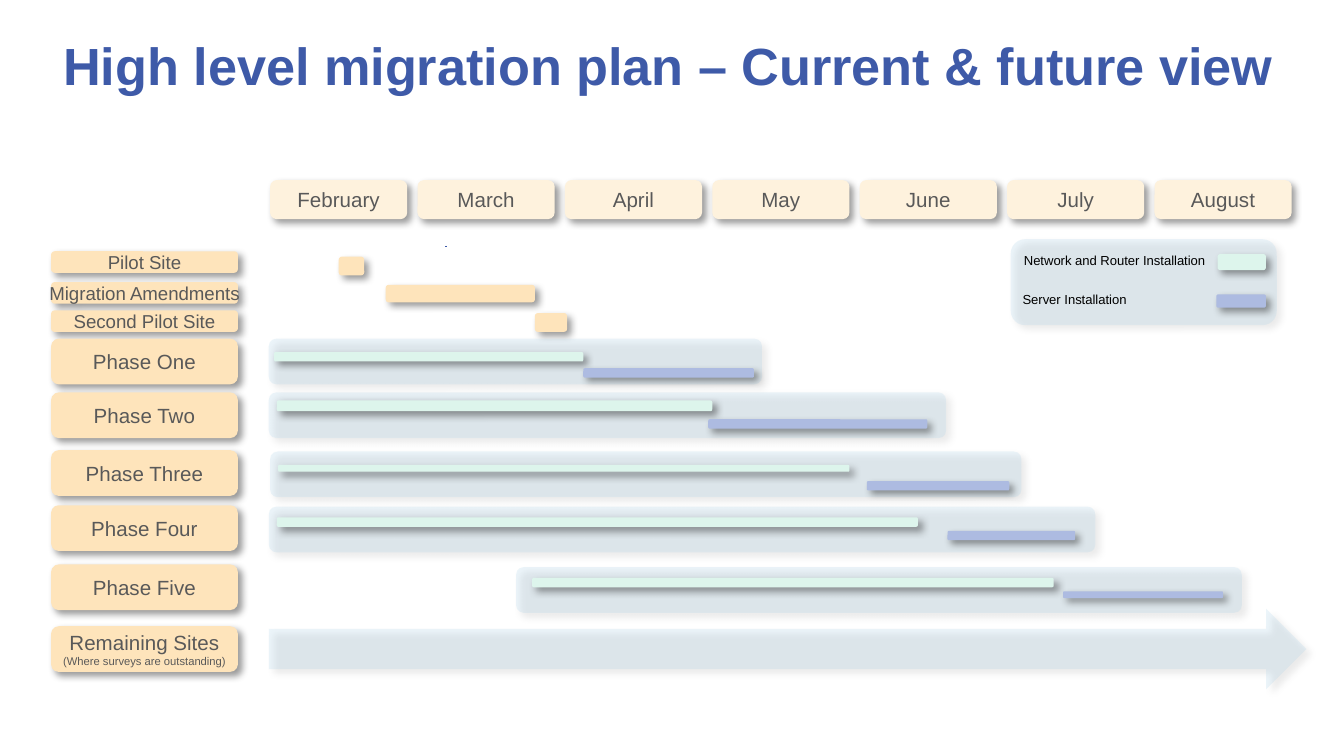
from collections import namedtuple
from dataclasses import dataclass

from lxml.etree import SubElement as Sub
from pptx import Presentation
from pptx.dml.color import RGBColor as Rgb
from pptx.enum.shapes import MSO_CONNECTOR as Link, MSO_SHAPE as Kind
from pptx.enum.text import MSO_ANCHOR as Anchor, MSO_AUTO_SIZE as Auto, PP_ALIGN as Align
from pptx.oxml.ns import qn
from pptx.util import Pt

PX = 9144
Box = namedtuple("Box", "x y w h")


@dataclass(frozen=True)
class Theme:
    """Colours, type sizes and font of the slide."""
    font: str = "Arial"
    blue: str = "3E5AA8"
    tick: str = "3A57A7"
    grey: str = "595959"
    black: str = "000000"
    month: str = "FEF2DD"
    label: str = "FEE4BB"
    panel: str = "A2CEE8"
    net: str = "DDF5EC"
    server: str = "ADBBE1"
    head: int = 28
    large: int = 11
    mid: int = 10
    key: int = 7
    small: int = 6


T = Theme()

MONTHS = ["February", "March", "April", "May", "June", "July", "August"]

PILOTS = [
    ("Pilot Site", 0, Box(214, 4, 19, 14)),
    ("Migration Amendments", 23, Box(249, 25, 111, 13)),
    ("Second Pilot Site", 44, Box(360, 46, 24, 14)),
]

PHASES = [
    ("Phase One", 252, Box(162, 0, 367, 34), Box(4, 10, 230, 7), Box(234, 22, 127, 7)),
    ("Phase Two", 292, Box(162, 0, 504, 34), Box(6, 6, 324, 8), Box(327, 20, 163, 7)),
    ("Phase Three", 335, Box(163, 1, 559, 34), Box(6, 10, 425, 5), Box(444, 22, 106, 7)),
    ("Phase Four", 376, Box(162, 1, 615, 34), Box(6, 8, 477, 7), Box(505, 18, 95, 7)),
    ("Phase Five", 420, Box(346, 2, 540, 34), Box(12, 8, 388, 7), Box(407, 18, 119, 5)),
]


def inner(box, part):
    """Return a part's box moved into its parent's box."""
    return Box(box.x + part.x, box.y + part.y, part.w, part.h)


def emu(box):
    """Turn a box in px into whole EMU."""
    return [round(v * PX) for v in box]


def write(par, text, size, color, bold=False):
    """Add one formatted run to a paragraph."""
    run = par.add_run()
    run.text = text
    font = run.font
    font.name, font.size, font.bold = T.font, Pt(size), bold
    font.color.rgb = Rgb.from_string(color)


def block(shapes, box, color, kind=Kind.ROUNDED_RECTANGLE, alpha=None):
    """Draw a borderless filled shape with a soft shadow."""
    shape = shapes.add_shape(kind, *emu(box))
    shape.fill.solid()
    shape.fill.fore_color.rgb = Rgb.from_string(color)
    shape.line.fill.background()
    shape.shadow.inherit = False
    props = shape._element.spPr
    if alpha:
        tone = props.find(qn("a:solidFill")).find(qn("a:srgbClr"))
        Sub(tone, qn("a:alpha"), val=str(alpha * 1000))
    cast = Sub(props.find(qn("a:effectLst")), qn("a:outerShdw"),
               blurRad=str(Pt(4)), dist=str(Pt(3)), dir="2700000", rotWithShape="0")
    Sub(Sub(cast, qn("a:srgbClr"), val=T.black), qn("a:alpha"), val="40000")
    return shape


def label(shapes, box, color, rows, wrap=False):
    """Draw a block with centred lines of text."""
    frame = block(shapes, box, color).text_frame
    frame.word_wrap = wrap
    frame.vertical_anchor = Anchor.MIDDLE
    for i, (text, size) in enumerate(rows):
        par = frame.add_paragraph() if i else frame.paragraphs[0]
        par.alignment = Align.CENTER
        write(par, text, size, T.grey)


def panel(shapes, box, kind=Kind.ROUNDED_RECTANGLE):
    """Draw a pale see-through panel."""
    block(shapes, box, T.panel, kind, alpha=20)


def title(slide, box):
    """Place and fill the title placeholder."""
    head = slide.shapes.title
    head.left, head.top, head.width, head.height = emu(box)
    frame = head.text_frame
    frame.word_wrap = False
    frame.auto_size = Auto.SHAPE_TO_FIT_TEXT
    frame.vertical_anchor = Anchor.TOP
    par = frame.paragraphs[0]
    par.alignment = Align.LEFT
    write(par, "High level migration plan – Current & future view", T.head, T.blue, True)


def months(shapes, box):
    """Spread the month headers evenly over the box."""
    wide = 102
    step = (box.w - wide) / (len(MONTHS) - 1)
    for i, name in enumerate(MONTHS):
        part = Box(i * step, 0, wide, box.h)
        label(shapes, inner(box, part), T.month, [(name, T.large)], True)


def pilots(shapes, box):
    """Draw the pilot labels, their bars and the tick mark."""
    for name, top, bar in PILOTS:
        label(shapes, inner(box, Box(0, top, 139, 16)), T.label, [(name, T.mid)])
        block(shapes, inner(box, bar), T.label)
    x, y, _, _ = emu(inner(box, Box(294, -4, 0, 0)))
    tick = shapes.add_connector(Link.STRAIGHT, x, y, x, y + PX)
    tick.line.color.rgb = Rgb.from_string(T.tick)
    tick.line.width = Pt(0.75)
    Sub(tick._element.spPr, qn("a:effectLst"))


def phase(shapes, box, name, area, net, server):
    """Draw one phase: label, panel and two bars."""
    label(shapes, box, T.label, [(name, T.large)])
    area = inner(box, area)
    panel(shapes, area)
    block(shapes, inner(area, net), T.net)
    block(shapes, inner(area, server), T.server)


def rest(shapes, box):
    """Draw the remaining sites label and its arrow."""
    rows = [("Remaining Sites", T.large), ("(Where surveys are outstanding)", T.small)]
    label(shapes, box, T.label, rows)
    panel(shapes, inner(box, Box(162, -13, 772, 60)), Kind.RIGHT_ARROW)


def legend(shapes, box):
    """Draw the grouped colour key."""
    group = shapes.add_group_shape().shapes
    panel(group, box)
    for text, spot, color, chip in [
        ("Network and Router Installation", Box(0, 5, 168, 22), T.net, Box(154, 11, 36, 12)),
        ("Server Installation", Box(-1, 34, 151, 22), T.server, Box(153, 41, 37, 10)),
    ]:
        block(group, inner(box, chip), color)
        frame = group.add_textbox(*emu(inner(box, spot))).text_frame
        frame.word_wrap = True
        frame.auto_size = Auto.SHAPE_TO_FIT_TEXT
        write(frame.paragraphs[0], text, T.key, T.black)


def main():
    """Build and save the plan slide."""
    deck = Presentation()
    deck.slide_width = 1000 * PX
    deck.slide_height = deck.slide_width * 9 // 16
    slide = deck.slides.add_slide(deck.slide_layouts[5])
    shapes = slide.shapes
    title(slide, Box(37, 20, 935, 57))
    months(shapes, Box(201, 134, 760, 29))
    pilots(shapes, Box(38, 187, 384, 60))
    for name, top, *parts in PHASES:
        phase(shapes, Box(38, top, 139, 34), name, *parts)
    rest(shapes, Box(38, 466, 139, 34))
    legend(shapes, Box(752, 178, 198, 64))
    deck.save("out.pptx")


if __name__ == "__main__":
    main()
